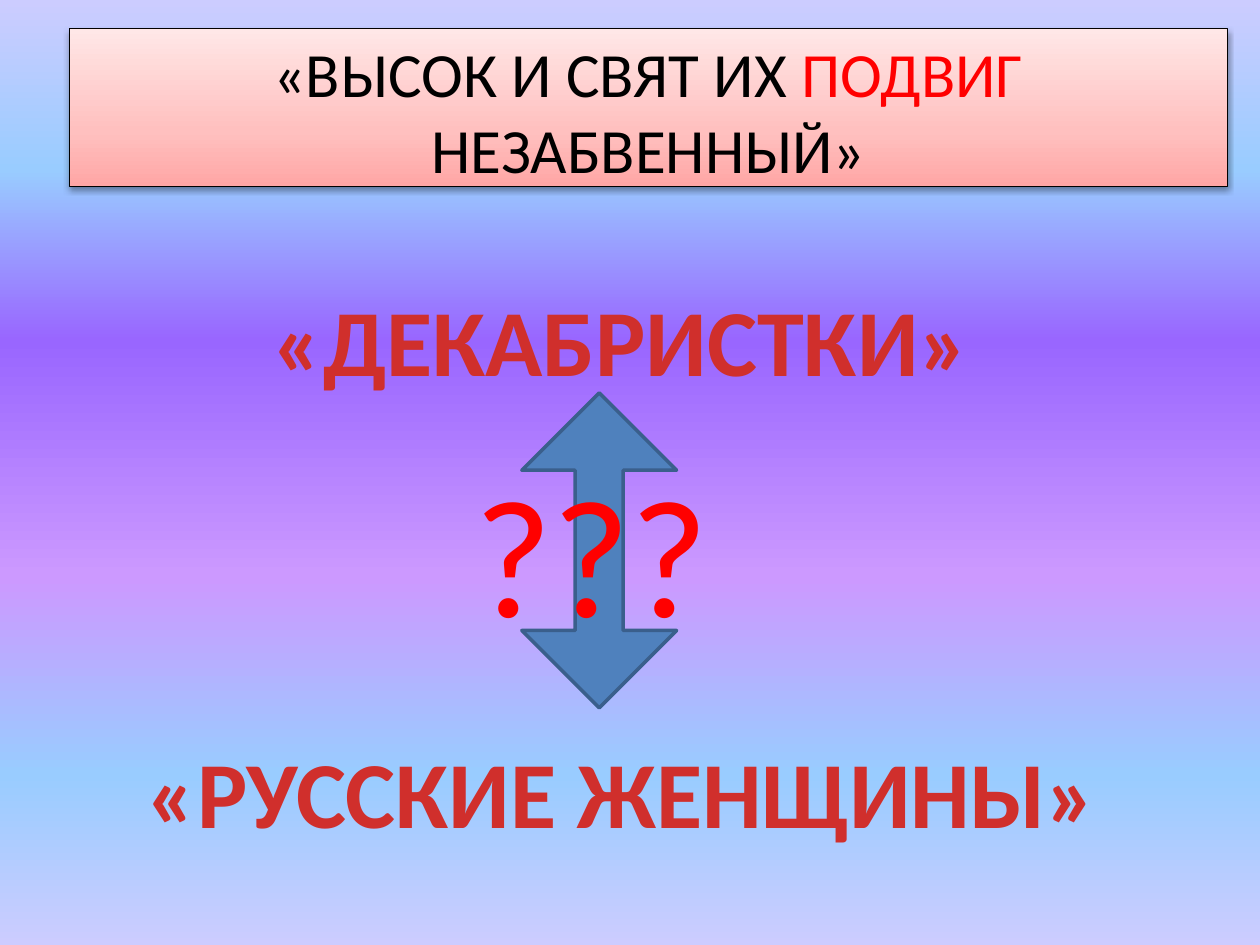
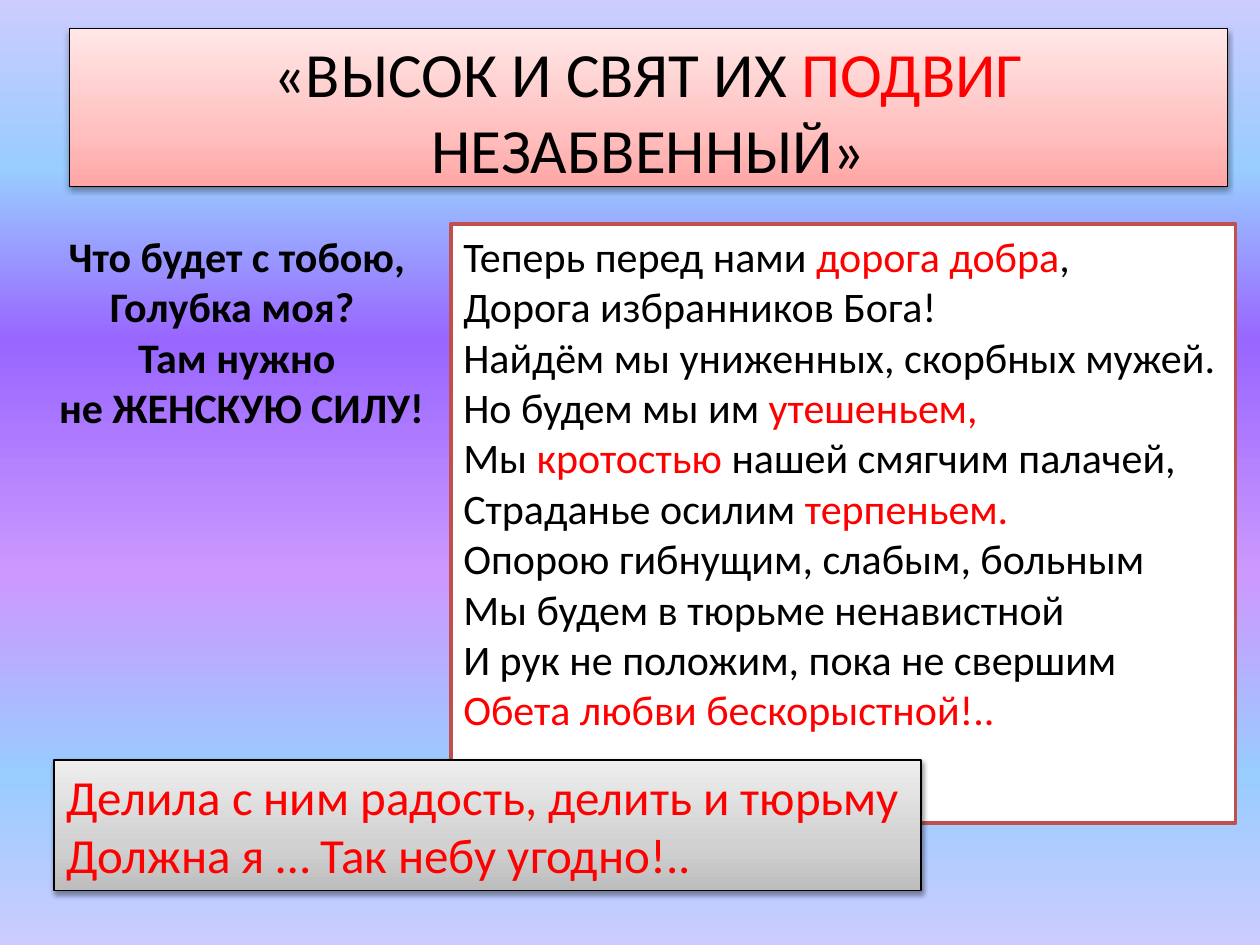
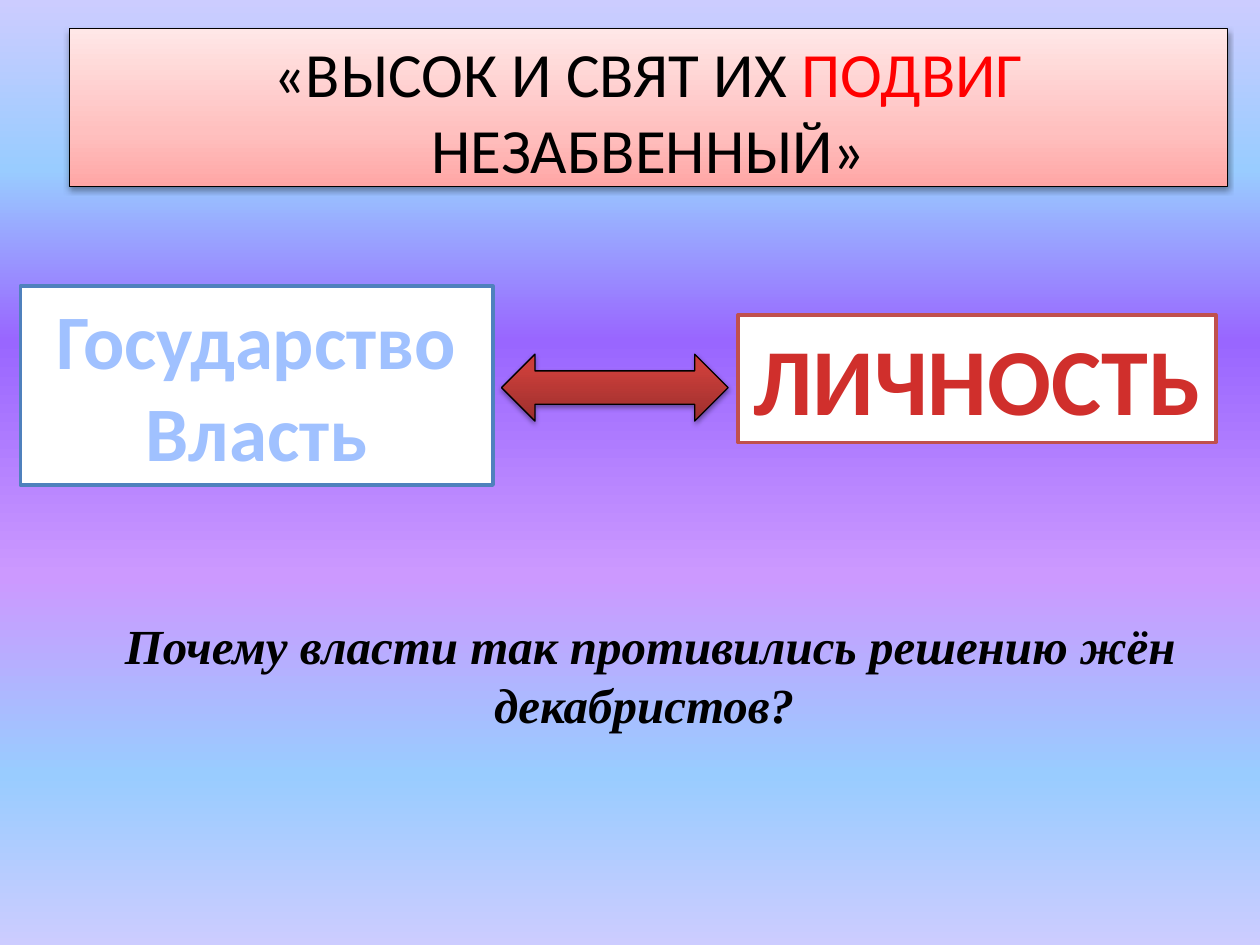
from lxml import etree
from pptx import Presentation
from pptx.dml.color import RGBColor
from pptx.enum.shapes import MSO_SHAPE
from pptx.enum.text import MSO_ANCHOR, PP_ALIGN
from pptx.oxml.ns import qn
from pptx.util import Cm, Pt

RECTANGLE = MSO_SHAPE.RECTANGLE
UP_DOWN_ARROW = MSO_SHAPE.UP_DOWN_ARROW
LEFT_RIGHT_ARROW = MSO_SHAPE.LEFT_RIGHT_ARROW
TOP = MSO_ANCHOR.TOP
LEFT, CENTER = PP_ALIGN.LEFT, PP_ALIGN.CENTER

COLORS = {
    "black": "000000",
    "white": "FFFFFF",
    "red": "FF0000",
    "crimson": "D02F2C",
    "pale blue": "A0C1FF",
    "blue": "4F81BD",
    "dark blue": "3A5F8C",
    "brick": "C0504D",
}
# Gradient stops: position in percent, colour
GRADIENTS = {
    "sky": [(0, "CCCCFF"), (18, "99CCFF"), (36, "9966FF"),
            (61, "CC99FF"), (82, "99CCFF"), (100, "CCCCFF")],
    "pink": [(0, "FFA6A5"), (35, "FFC0BF"), (100, "FFE7E7")],
    "gray": [(0, "BDBDBD"), (35, "D1D1D1"), (100, "EEEEEE")],
    "deep red": [(0, "9C2F2D"), (80, "CB3E3A"), (100, "CE3B37")],
}
TITLE = ["«ВЫСОК И СВЯТ ИХ |ПОДВИГ |НЕЗАБВЕННЫЙ»"]


def set_gradient(fill, owner, stops, angle):
    """Fill with the stops; owner is the XML element that holds the fill."""
    fill.gradient()
    fill.gradient_angle = angle
    stop_list = owner.find(".//" + qn("a:gsLst"))
    for old_stop in list(stop_list):
        stop_list.remove(old_stop)
    for position, color in stops:
        stop = etree.SubElement(stop_list, qn("a:gs"), pos=str(position * 1000))
        etree.SubElement(stop, qn("a:srgbClr"), val=color)


def add_block(slide, box, lines=(), size=24, color="black", fill=None, line="black",
              geometry=RECTANGLE, align=CENTER, bold=False, italic=False, font="Calibri"):
    """Add a shape, or a text box if there is no fill; text between bars is red."""
    left, top, width, height = (Cm(length) for length in box)
    if fill is None:
        block = slide.shapes.add_textbox(left, top, width, height)
    else:
        block = slide.shapes.add_shape(geometry, left, top, width, height)
        block.shadow.inherit = False
        block.line.color.rgb = RGBColor.from_string(COLORS[line])
        if fill in GRADIENTS:
            block.line.width = Pt(0.75)
            properties = block.element.spPr
            set_gradient(block.fill, properties, GRADIENTS[fill], 90)
            shadow = etree.SubElement(
                properties.find(qn("a:effectLst")), qn("a:outerShdw"),
                blurRad=str(Pt(3.1)), dist=str(Pt(1.6)), dir="5400000", rotWithShape="0")
            shade = etree.SubElement(shadow, qn("a:srgbClr"), val=COLORS["black"])
            etree.SubElement(shade, qn("a:alpha"), val="38000")
        else:
            block.line.width = Pt(2)
            block.fill.solid()
            block.fill.fore_color.rgb = RGBColor.from_string(COLORS[fill])

    frame = block.text_frame
    frame.word_wrap = True
    frame.vertical_anchor = TOP
    for number, text in enumerate(lines):
        paragraph = frame.add_paragraph() if number else frame.paragraphs[0]
        paragraph.alignment = align
        for part_number, part in enumerate(text.split("|")):
            if not part:
                continue
            run = paragraph.add_run()
            run.text = part
            run.font.name = font
            run.font.size = Pt(size)
            run.font.bold = bold
            run.font.italic = italic
            part_color = "red" if part_number % 2 else color
            run.font.color.rgb = RGBColor.from_string(COLORS[part_color])
    return block


prs = Presentation()
prs.slide_width, prs.slide_height = Cm(25.4), Cm(19.05)
master = prs.slide_master
set_gradient(master.background.fill, master.element.find(".//" + qn("p:bg")),
             GRADIENTS["sky"], 270)

slides = []
for _ in range(3):
    slide = prs.slides.add_slide(prs.slide_layouts[6])
    add_block(slide, (1.4, 0.58, 23.34, 3.18), TITLE, size=36, fill="pink")
    slides.append(slide)
names_slide, verses_slide, conflict_slide = slides

# Two titles of the poem
add_block(names_slide, (5.16, 5.56, 14.73, 2.57), ["«ДЕКАБРИСТКИ»"],
          size=54, color="crimson", bold=True)
add_block(names_slide, (2.59, 14.68, 19.89, 2.57), ["«РУССКИЕ ЖЕНЩИНЫ»"],
          size=54, color="crimson", bold=True)
names_arrow = add_block(names_slide, (10.52, 7.92, 3.12, 6.35), fill="blue",
                        line="dark blue", geometry=UP_DOWN_ARROW)
names_arrow.adjustments[0] = 0.18
names_arrow.adjustments[1] = 0.31
add_block(names_slide, (9.32, 8.94, 5.4, 4.37), ["???"], size=96, color="red", align=LEFT)

# Verses
add_block(verses_slide, (9.09, 4.52, 15.82, 12.07), [
    "Теперь перед нами |дорога добра|,",
    "Дорога избранников Бога!",
    "Найдём мы униженных, скорбных мужей.",
    "Но будем мы им |утешеньем,",
    "Мы |кротостью| нашей смягчим палачей,",
    "Страданье осилим |терпеньем.",
    "Опорою гибнущим, слабым, больным",
    "Мы будем в тюрьме ненавистной",
    "И рук не положим, пока не свершим",
    "|Обета любви бескорыстной!..",
], fill="white", line="brick", align=LEFT)
add_block(verses_slide, (1.09, 15.32, 17.48, 2.64), [
    "Делила с ним радость, делить и тюрьму",
    "Должна я … Так небу угодно!..",
], size=28, color="red", fill="gray", align=LEFT)
add_block(verses_slide, (0.71, 4.52, 8.13, 4.37), [
    "Что будет с тобою,",
    "Голубка моя? ",
    "Там нужно",
    " не ЖЕНСКУЮ СИЛУ!",
], bold=True)

# State against person
add_block(conflict_slide, (1.4, 12.29, 23.42, 3.18),
          ["Почему власти так противились решению жён декабристов? "],
          size=28, bold=True, italic=True, font="Times New Roman")
add_block(conflict_slide, (0.41, 5.77, 9.53, 4.01), ["Государство", "Власть"],
          size=44, color="pale blue", fill="white", line="blue", bold=True)
add_block(conflict_slide, (14.88, 6.35, 9.63, 2.57), ["ЛИЧНОСТЬ"],
          size=54, color="crimson", fill="white", line="brick", bold=True)
add_block(conflict_slide, (10.11, 7.14, 4.57, 1.35), fill="deep red",
          geometry=LEFT_RIGHT_ARROW)

prs.save("out.pptx")
